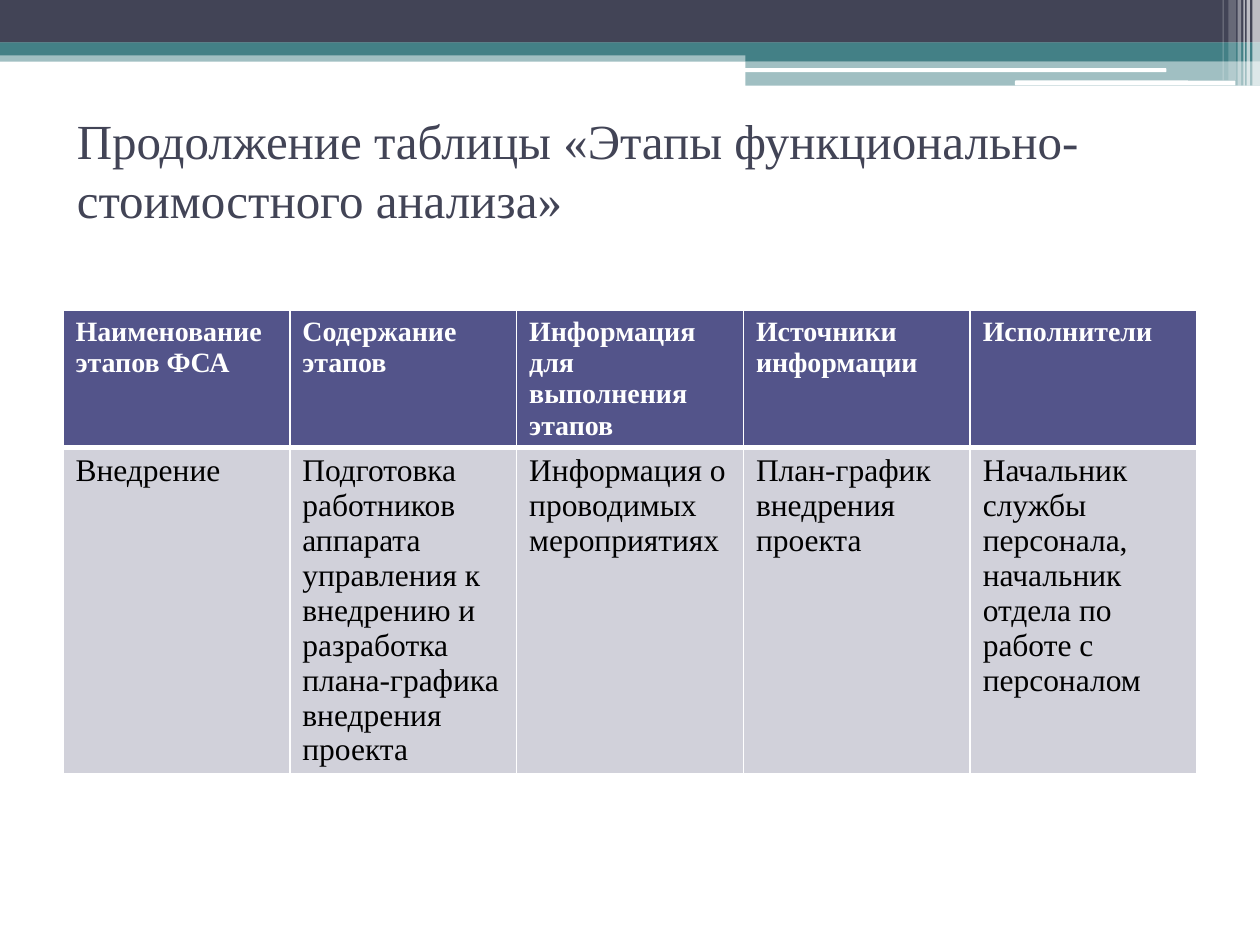
from lxml.etree import SubElement
from pptx import Presentation
from pptx.dml.color import RGBColor
from pptx.enum.shapes import MSO_SHAPE as Shape
from pptx.enum.text import MSO_ANCHOR as Anchor, PP_ALIGN as Align
from pptx.oxml.ns import qn
from pptx.util import Pt

FONT = "Times New Roman"
SLATE = RGBColor(0x42, 0x44, 0x56)
TEAL = RGBColor(0x43, 0x80, 0x86)
WHITE = RGBColor(0xFF, 0xFF, 0xFF)
BLACK = RGBColor(0, 0, 0)
INDIGO = RGBColor(0x53, 0x54, 0x8A)
PALE = RGBColor(0xD1, 0xD1, 0xDA)

# left, top, width, height, colour, opacity in percent
BANDS = [
    (0, 28.8, 720, 6.5, TEAL, 50),
    (0, 0, 720, 24.4, SLATE, 100),
    (0, 24.2, 720, 7.4, TEAL, 100),
    (426, 28, 294, 7, TEAL, 100),
    (426, 34.8, 294, 14.2, TEAL, 50),
]
RULES = [(425.5, 39, 241, 2.2), (580, 46, 126, 2.8)]
# left, width, height, opacity in percent
STRIPES = [
    (715.7, 4.3, 49, 65),
    (712.3, 2, 49, 65),
    (710.6, 0.8, 49, 60),
    (707.2, 2, 49, 40),
    (702, 4.3, 46, 20),
    (698.6, 0.7, 46, 30),
]

HEADERS = [
    "Наименование этапов ФСА",
    "Содержание этапов",
    "Информация для выполнения этапов",
    "Источники информации",
    "Исполнители",
]
STAGE = [
    "Внедрение",
    "Подготовка работников аппарата управления к внедрению и разработка "
    "плана-графика внедрения проекта",
    "Информация о проводимых мероприятиях",
    "План-график внедрения проекта",
    "Начальник службы персонала, начальник отдела по работе с персоналом",
]


def write_text(frame, text, size, color, bold=False):
    para = frame.paragraphs[0]
    para.alignment = Align.LEFT
    span = para.add_run()
    span.text = text
    span.font.name = FONT
    span.font.size = Pt(size)
    span.font.bold = bold
    span.font.color.rgb = color


def add_block(page, left, top, width, height, color, opacity=100, kind=Shape.RECTANGLE):
    block = page.shapes.add_shape(kind, Pt(left), Pt(top), Pt(width), Pt(height))
    block.shadow.inherit = False
    block.line.fill.background()
    block.fill.solid()
    block.fill.fore_color.rgb = color
    if opacity < 100:
        fill_color = block.fill._xPr.find(qn("a:solidFill"))[0]
        SubElement(fill_color, qn("a:alpha"), val=str(opacity * 1000))


def add_header_art(page):
    for band in BANDS:
        add_block(page, *band)
    for rule in RULES:
        add_block(page, *rule, WHITE, kind=Shape.ROUNDED_RECTANGLE)
    for left, width, height, opacity in STRIPES:
        add_block(page, left, 0, width, height, WHITE, opacity)


def set_title(page, text):
    title = page.shapes.title
    title.left, title.top, title.width, title.height = Pt(36.7), Pt(55), Pt(648), Pt(84)
    title.text_frame.word_wrap = True
    title.text_frame.vertical_anchor = Anchor.MIDDLE
    write_text(title.text_frame, text, size=28, color=SLATE)


def set_borders(cell, **widths):
    properties = cell._tc.get_or_add_tcPr()
    for index, side in enumerate(("lnL", "lnR", "lnT", "lnB")):
        line = SubElement(properties, qn(f"a:{side}"), w=str(Pt(widths.get(side, 1))))
        fill = SubElement(line, qn("a:solidFill"))
        SubElement(fill, qn("a:srgbClr"), val=str(WHITE))
        properties.insert(index, line)  # borders come before the fill


def fill_row(table, row, texts, fill, border_widths, **text_format):
    for column, text in enumerate(texts):
        cell = table.cell(row, column)
        cell.fill.solid()
        cell.fill.fore_color.rgb = fill
        set_borders(cell, **border_widths)
        write_text(cell.text_frame, text, **text_format)


def add_stage_table(page):
    frame = page.shapes.add_table(2, len(HEADERS), Pt(36), Pt(177.4), Pt(648), Pt(264))
    table = frame.table
    table.rows[0].height = Pt(78)
    table.rows[1].height = Pt(186)
    fill_row(table, 0, HEADERS, INDIGO, {"lnB": 3}, size=16, color=WHITE, bold=True)
    fill_row(table, 1, STAGE, PALE, {"lnT": 3}, size=18, color=BLACK)


def main():
    deck = Presentation()
    deck.slide_width, deck.slide_height = Pt(720), Pt(540)
    page = deck.slides.add_slide(deck.slide_layouts[5])  # title only
    add_header_art(page)
    set_title(page, "Продолжение таблицы «Этапы функционально-стоимостного анализа»")
    add_stage_table(page)
    deck.save("out.pptx")


if __name__ == "__main__":
    main()
